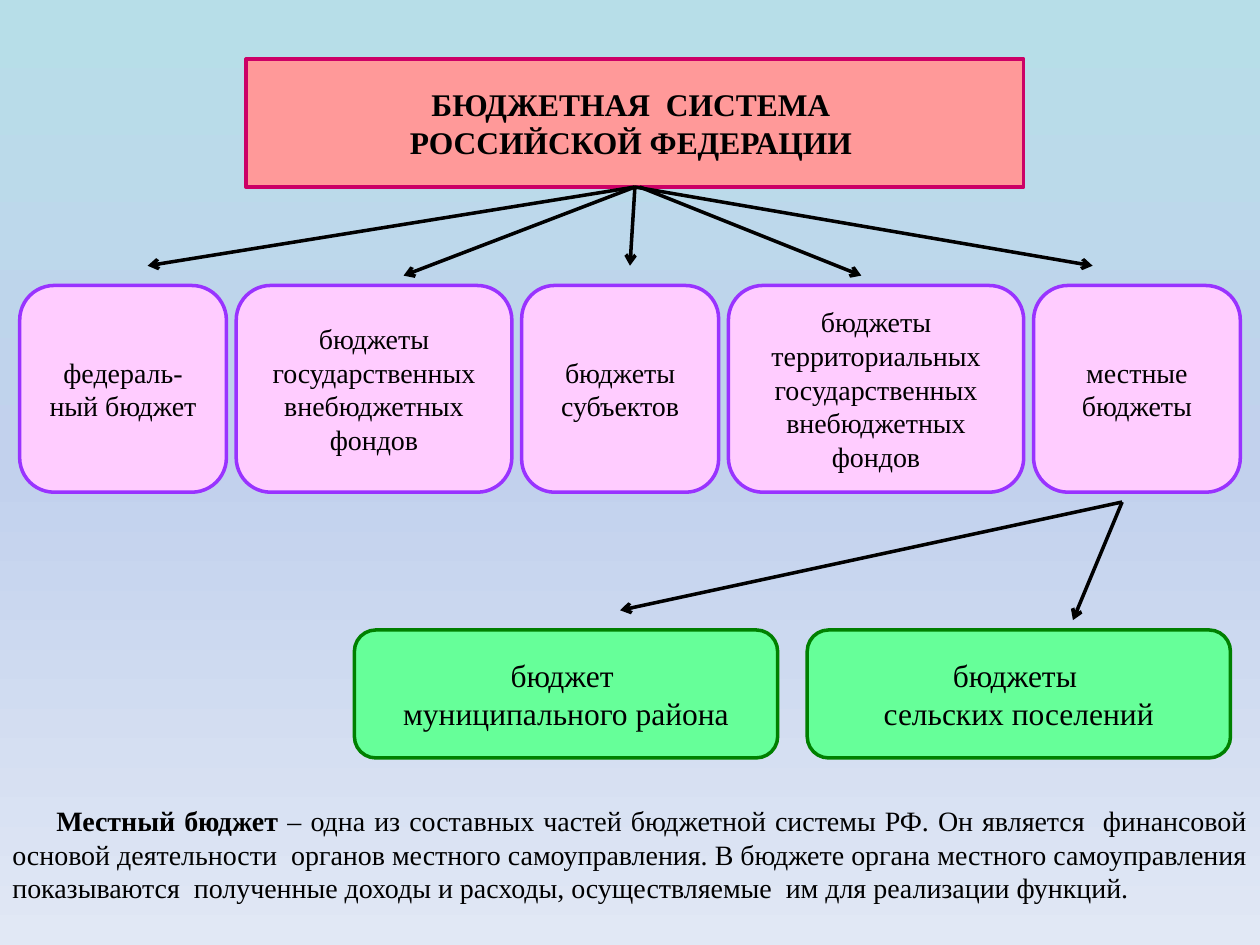
from copy import deepcopy

from lxml import etree
from pptx import Presentation
from pptx import util as u
from pptx.dml.color import RGBColor
from pptx.enum import shapes, text
from pptx.oxml.ns import qn

COLORS = {
    "sky": "B7DEE8", "haze": "C2D1ED", "mist": "E1E8F5", "ink": "000000",
    "coral": "FF9999", "crimson": "CC0066",
    "pink": "FFCCFF", "violet": "9933FF",
    "mint": "66FF99", "green": "008000",
}
FONT = "Times New Roman"
COLUMNS, ROWS = 128, 96
WIDTH, HEIGHT = u.Inches(10), u.Inches(7.5)

BUDGETS = [
    (21, ["федераль-", "ный бюджет"]),
    (28, ["бюджеты государственных внебюджетных фондов"]),
    (20, ["бюджеты субъектов"]),
    (30, ["бюджеты территориальных государственных внебюджетных фондов"]),
    (21, ["местные бюджеты"]),
]
LOCAL_BUDGETS = [
    ["бюджет ", "муниципального района"],
    ["бюджеты ", "сельских поселений"],
]
SYSTEM_ARROWS = [(65, 87.5, 28), (64.5, 64, 27), (64.5, 15, 27),
                 (64.5, 41, 28), (64.5, 111, 27)]
LOCAL_ARROWS = [(63, 62), (109, 63)]
DEFINITION = [
    ("Местный бюджет ", True),
    ("– одна из составных частей бюджетной системы РФ. Он является  финансовой "
     "основой деятельности  органов местного самоуправления. В бюджете органа "
     "местного самоуправления показываются  полученные доходы и расходы, "
     "осуществляемые  им для реализации функций.", False),
]


def color(name):
    return RGBColor.from_string(COLORS[name])


def col(n):
    return int(WIDTH * n / COLUMNS)


def row(n):
    return int(HEIGHT * n / ROWS)


def grid(left, top, width, height):
    return col(left), row(top), col(width), row(height)


def paint_background(slide):
    fill = slide.background.fill
    fill.gradient()
    first = slide.element.find(".//" + qn("a:gs"))
    first.addnext(deepcopy(first))
    for stop, position, name in zip(fill.gradient_stops, (0, 0.5, 1),
                                    ("sky", "haze", "mist")):
        stop.position = position
        stop.color.rgb = color(name)
    fill.gradient_angle = 270


def add_run(paragraph, words, size, bold=False):
    run = paragraph.add_run()
    run.text = words
    run.font.name, run.font.size, run.font.bold = FONT, u.Pt(size), bold
    run.font.color.rgb = color("ink")


def style_box(box, lines, size, fill, outline, bold=False):
    box.shadow.inherit = False
    box.fill.solid()
    box.fill.fore_color.rgb = color(fill)
    box.line.color.rgb = color(outline)
    box.line.width = u.Pt(2)
    frame = box.text_frame
    frame.word_wrap = True
    frame.vertical_anchor = text.MSO_ANCHOR.MIDDLE
    for i, line in enumerate(lines):
        paragraph = frame.add_paragraph() if i else frame.paragraphs[0]
        paragraph.alignment = text.PP_ALIGN.CENTER
        add_run(paragraph, line, size, bold)


def add_heading(slide):
    heading = slide.shapes.title
    heading.left, heading.top, heading.width, heading.height = grid(25, 6, 79, 13)
    outline = etree.SubElement(heading.element.spPr, qn("a:prstGeom"), prst="roundRect")
    etree.SubElement(outline, qn("a:avLst"))
    style_box(heading, ["БЮДЖЕТНАЯ  СИСТЕМА ", "РОССИЙСКОЙ ФЕДЕРАЦИИ "],
              18, "coral", "crimson", bold=True)


def add_box(slide, place, lines, size, fill, outline):
    box = slide.shapes.add_shape(shapes.MSO_SHAPE.ROUNDED_RECTANGLE, *grid(*place))
    style_box(box, lines, size, fill, outline)


def add_arrow(slide, start, end):
    arrow = slide.shapes.add_connector(
        shapes.MSO_CONNECTOR.STRAIGHT,
        col(start[0]), row(start[1]), col(end[0]), row(end[1]))
    arrow.line.color.rgb = color("ink")
    arrow.line.width = u.Pt(2)
    properties = arrow.element.spPr
    etree.SubElement(properties.find(qn("a:ln")), qn("a:tailEnd"), type="arrow")
    etree.SubElement(properties, qn("a:effectLst"))


def add_definition(slide):
    frame = slide.shapes.add_textbox(*grid(0, 81, 128, 15)).text_frame
    frame.word_wrap = True
    paragraph = frame.paragraphs[0]
    paragraph.alignment = text.PP_ALIGN.JUSTIFY
    paragraph._p.get_or_add_pPr().set("indent", str(u.Inches(0.35)))
    for words, bold in DEFINITION:
        add_run(paragraph, words, 16, bold)


def main():
    deck = Presentation()
    deck.slide_width, deck.slide_height = WIDTH, HEIGHT
    slide = deck.slides.add_slide(deck.slide_layouts[5])
    paint_background(slide)
    add_heading(slide)

    left = 2
    for width, lines in BUDGETS:
        add_box(slide, (left, 29, width, 21), lines, 16, "pink", "violet")
        left += width + 1
    for start, end, bottom in SYSTEM_ARROWS:
        add_arrow(slide, (start, 19), (end, bottom))

    for i, lines in enumerate(LOCAL_BUDGETS):
        add_box(slide, (36 + 46 * i, 64, 43, 13), lines, 18, "mint", "green")
    for end in LOCAL_ARROWS:
        add_arrow(slide, (114, 51), end)

    add_definition(slide)
    deck.save("out.pptx")


if __name__ == "__main__":
    main()
